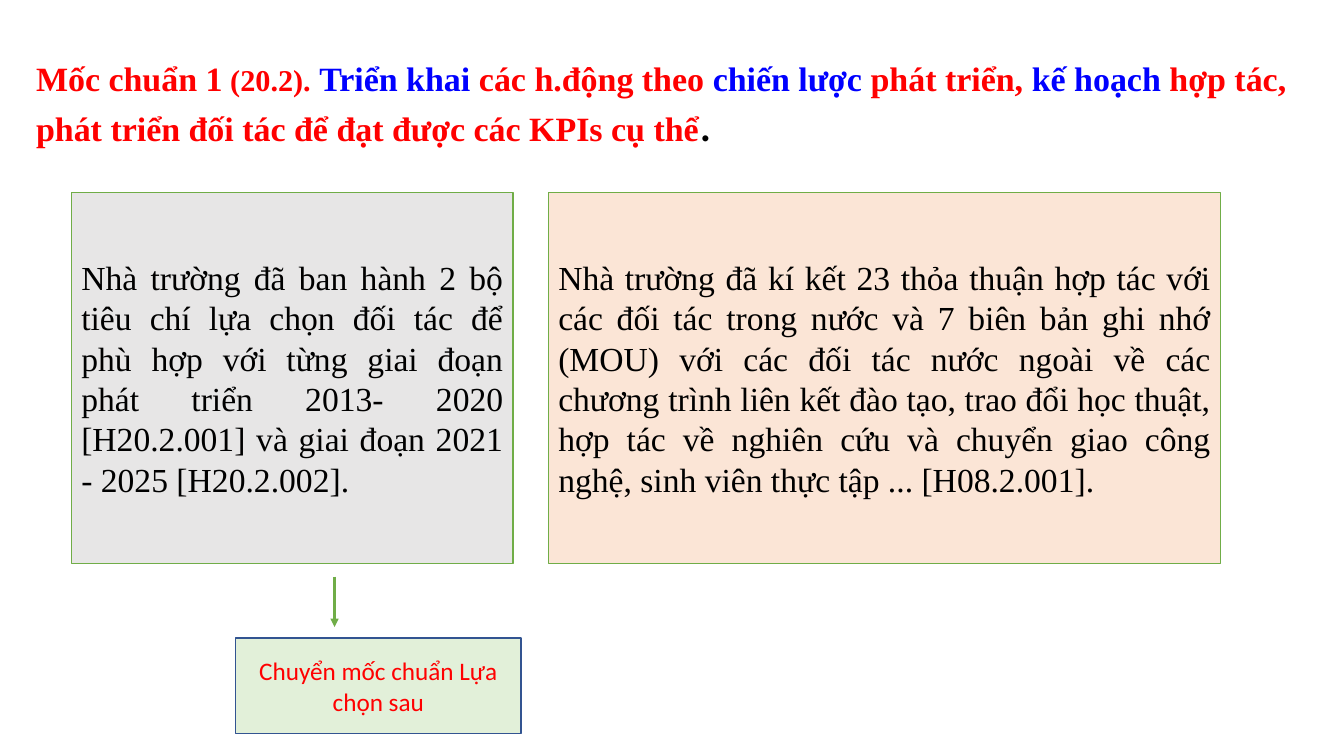
from lxml.etree import SubElement
from pptx import Presentation
from pptx.dml.color import RGBColor
from pptx.enum.shapes import MSO_CONNECTOR, MSO_SHAPE
from pptx.enum.text import MSO_ANCHOR, PP_ALIGN
from pptx.oxml.ns import qn
from pptx.util import Cm, Pt

SERIF, SANS = "Times New Roman", "Calibri"
RED, BLUE, BLACK, GREEN = "FF0000", "0000FF", "000000", "70AD47"

# text, size, font, colour, bold
TITLE = [
    ("Mốc chuẩn 1", 24.3, SERIF, RED, True),
    (" (20.2).", 21.6, SERIF, RED, True),
    (" ", 24.3, SERIF, RED, True),
    ("Triển khai ", 24.3, SERIF, BLUE, True),
    ("các h.động theo ", 24.3, SERIF, RED, True),
    ("chiến lược ", 24.3, SERIF, BLUE, True),
    ("phát triển, ", 24.3, SERIF, RED, True),
    ("kế hoạch ", 24.3, SERIF, BLUE, True),
    ("hợp tác, phát triển đối tác để đạt được các KPIs cụ thể",
     24.3, SERIF, RED, True),
    (".", 36, SANS, BLACK, False),
]
TITLE_AT = (0.66, 1.37, 32.54, 2.67)

PARTNERS = (
    "Nhà trường đã ban hành 2 bộ tiêu chí lựa chọn đối tác để phù hợp với "
    "từng giai đoạn phát triển 2013- 2020 [H20.2.001] và giai đoạn "
    "2021 - 2025 [H20.2.002]."
)
DEALS = (
    "Nhà trường đã kí kết 23 thỏa thuận hợp tác với các đối tác trong nước "
    "và 7 biên bản ghi nhớ (MOU) với các đối tác nước ngoài về các chương "
    "trình liên kết đào tạo, trao đổi học thuật, hợp tác về nghiên cứu và "
    "chuyển giao công nghệ, sinh viên thực tập ... [H08.2.001]."
)
NEXT = "Chuyển mốc chuẩn Lựa chọn sau"

TOP, HIGH = 4.85, 9.35
# place, fill, line, alignment, text style
BOXES = [
    ((1.8, TOP, 11.13, HIGH), "E7E6E6", GREEN, PP_ALIGN.JUSTIFY,
     (PARTNERS, 24, SERIF, BLACK, False)),
    ((13.82, TOP, 16.94, HIGH), "FBE5D6", GREEN, PP_ALIGN.JUSTIFY,
     (DEALS, 24, SERIF, BLACK, False)),
    ((5.94, 16.08, 7.19, 2.41), "E2F0D9", "325491", PP_ALIGN.CENTER,
     (NEXT, 18, SANS, RED, False)),
]
ARROW = (8.43, 14.53, 8.43, 15.8)


def color(form, code):
    form.rgb = RGBColor.from_string(code)


def lengths(nums):
    return [Cm(num) for num in nums]


def write(shape, parts, align):
    """Fill the shape with one paragraph of styled runs."""
    frame = shape.text_frame
    frame.word_wrap = True
    frame.vertical_anchor = MSO_ANCHOR.MIDDLE
    para = frame.paragraphs[0]
    para.alignment = align
    for text, size, face, code, bold in parts:
        run = para.add_run()
        run.text = text
        run.font.size = Pt(size)
        run.font.name = face
        run.font.bold = bold
        color(run.font.color, code)
    return para


def add_box(slide, place, fill, line, align, part):
    box = slide.shapes.add_shape(MSO_SHAPE.RECTANGLE, *lengths(place))
    box.shadow.inherit = False
    box.fill.solid()
    color(box.fill.fore_color, fill)
    color(box.line.color, line)
    box.line.width = Pt(1)
    write(box, [part], align)


def add_arrow(slide, ends):
    arrow = slide.shapes.add_connector(MSO_CONNECTOR.STRAIGHT, *lengths(ends))
    color(arrow.line.color, GREEN)
    arrow.line.width = Pt(1.5)
    props = arrow._element.spPr
    SubElement(props.find(qn("a:ln")), qn("a:tailEnd"), type="triangle")
    SubElement(props, qn("a:effectLst"))


def main():
    deck = Presentation()
    deck.slide_width, deck.slide_height = Cm(33.87), Cm(19.05)
    slide = deck.slides.add_slide(deck.slide_layouts[6])
    title = slide.shapes.add_textbox(*lengths(TITLE_AT))
    write(title, TITLE, PP_ALIGN.LEFT).line_spacing = 0.9
    for box in BOXES:
        add_box(slide, *box)
    add_arrow(slide, ARROW)
    deck.save("out.pptx")


if __name__ == "__main__":
    main()
